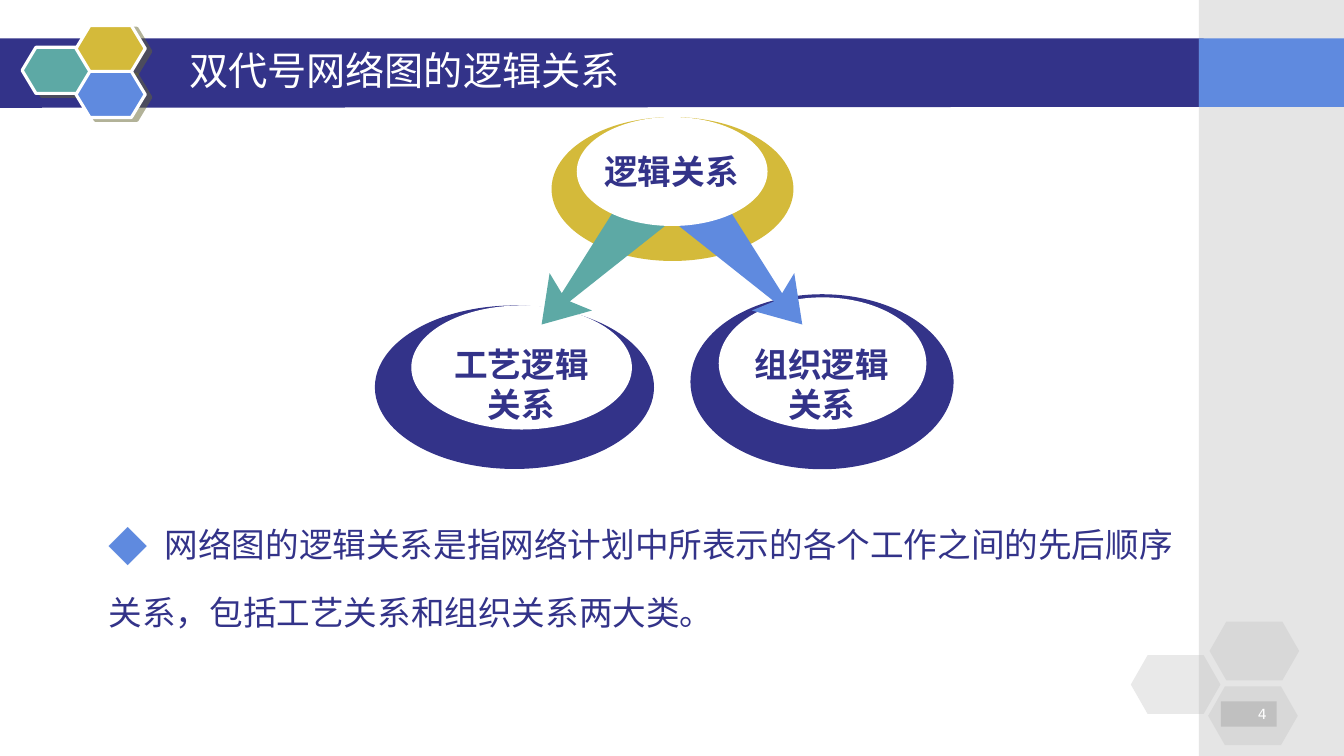
from dataclasses import dataclass

from lxml import etree
from pptx import Presentation
from pptx.dml.color import RGBColor
from pptx.enum.shapes import MSO_SHAPE
from pptx.enum.text import MSO_ANCHOR, PP_ALIGN
from pptx.oxml import parse_xml
from pptx.oxml.ns import qn
from pptx.shapes.autoshape import Shape
from pptx.slide import Slide
from pptx.util import Pt

RECTANGLE, HEXAGON, ELLIPSE = MSO_SHAPE.RECTANGLE, MSO_SHAPE.HEXAGON, MSO_SHAPE.OVAL
LEFT, CENTER, RIGHT = PP_ALIGN.LEFT, PP_ALIGN.CENTER, PP_ALIGN.RIGHT
TOP, MIDDLE = MSO_ANCHOR.TOP, MSO_ANCHOR.MIDDLE

COLORS = {
    "navy": "333389", "blue": "5F8ADF", "teal": "5DA9A5", "gold": "D4BA3A",
    "white": "FFFFFF", "gray": "C0C0C0", "shadow": "666633",
}
DRAWING = "http://schemas.openxmlformats.org/drawingml/2006/main"
CJK_FONT, NUMBER_FONT = "Noto Sans CJK SC", "DejaVu Sans"
WIDTH, HEIGHT = 960, 540

Box = tuple[float, float, float, float]
Points = list[tuple[float, float]]


@dataclass
class Figure:
    preset: MSO_SHAPE
    box: Box
    color: str
    opacity: int = 100
    adjustment: float | None = None
    badge: bool = False


@dataclass
class Text:
    content: str
    size: float
    color: str
    bold: bool = False
    align: PP_ALIGN = LEFT
    spacing: float | None = None
    font: str = CJK_FONT
    bullet: str = ""


@dataclass
class Node:
    outer: Box
    inner: Box
    color: str
    label: str
    label_center: float
    label_top: float


BACKDROP = [
    Figure(RECTANGLE, (856.3, 0, 103.7, HEIGHT), "gray", 40),
    Figure(RECTANGLE, (856.3, 27.4, 103.7, 49), "blue"),
    *(Figure(HEXAGON, (left, top, 49.4, 33), color, 100, 0.3, True)
      for left, top, color in [(15.8, 33.8, "teal"), (54.3, 18.2, "gold"), (54.3, 51, "blue")]),
    *(Figure(HEXAGON, (left, top, 64, 42), "gray", 35, 0.286)
      for left, top in [(807.8, 468), (864, 444), (863, 490.3)]),
]
TOP_NODE = Node((394, 83.6, 172.8, 102.8), (412, 83.6, 136.3, 77.8),
                "gold", "逻辑关系", 479.6, 104.5)
BRANCHES = [
    Node((267.8, 218.2, 199.4, 116.8), (293.8, 218.2, 157.6, 88.6),
         "navy", "工艺逻辑关系", 372.5, 242.4),
    Node((493.2, 210.2, 188, 125), (513.4, 212.4, 148.3, 94.3),
         "navy", "组织逻辑关系", 587, 242.4),
]
RIGHT_ARROW = [(506.9, 127.4), (558.7, 209.5), (567.4, 195.1), (573.1, 231.8),
               (537.1, 221.8), (553, 215.3), (476.6, 154.8)]
LEFT_ARROW = [(WIDTH - x, y) for x, y in RIGHT_ARROW]
BANNER = [(0, 27.4), (859.7, 27.4), (859, 76.3), (0, 77)]


def rgb(color: str) -> RGBColor:
    return RGBColor.from_string(COLORS[color])


def paint(shape: Shape, color: str) -> None:
    shape.shadow.inherit = False
    shape.fill.solid()
    shape.fill.fore_color.rgb = rgb(color)
    shape.line.fill.background()


def outline_badge(shape: Shape) -> None:
    """Give a badge hexagon its white edge and hard drop shadow."""
    shape.line.color.rgb = rgb("white")
    shape.line.width = Pt(2.25)
    effects = shape._element.spPr.find(qn("a:effectLst"))
    effects.append(parse_xml(
        f'<a:outerShdw xmlns:a="{DRAWING}" blurRad="0" dist="{Pt(4.5)}" dir="{27 * 60000}" '
        f'algn="ctr" rotWithShape="0"><a:srgbClr val="{COLORS["shadow"]}">'
        '<a:alpha val="50000"/></a:srgbClr></a:outerShdw>'))


def add_figure(slide: Slide, figure: Figure) -> Shape:
    shape = slide.shapes.add_shape(figure.preset, *map(Pt, figure.box))
    paint(shape, figure.color)
    if figure.adjustment is not None:
        shape.adjustments[0] = figure.adjustment
    if figure.opacity < 100:
        color = shape._element.spPr.find(qn("a:solidFill"))[0]
        etree.SubElement(color, qn("a:alpha")).set("val", str(figure.opacity * 1000))
    if figure.badge:
        outline_badge(shape)
    return shape


def add_polygon(slide: Slide, points: Points, color: str) -> None:
    start, *others = [(Pt(x), Pt(y)) for x, y in points]
    builder = slide.shapes.build_freeform(*start)
    builder.add_line_segments(others, close=True)
    paint(builder.convert_to_shape(), color)


def write(shape: Shape, texts: list[Text], anchor: MSO_ANCHOR = TOP) -> None:
    """Fill the shape with one paragraph per text."""
    frame = shape.text_frame
    frame.word_wrap = True
    frame.vertical_anchor = anchor
    for index, text in enumerate(texts):
        paragraph = frame.add_paragraph() if index else frame.paragraphs[0]
        paragraph.alignment = text.align
        if text.spacing:
            paragraph.line_spacing = Pt(text.spacing)
        if text.bullet:
            properties = paragraph._p.get_or_add_pPr()
            properties.set("marL", str(Pt(40)))
            properties.set("indent", str(-Pt(40)))
            color = etree.SubElement(properties, qn("a:buClr"))
            etree.SubElement(color, qn("a:srgbClr")).set("val", COLORS["blue"])
            etree.SubElement(properties, qn("a:buSzPct")).set("val", "117000")
            etree.SubElement(properties, qn("a:buFont")).set("typeface", CJK_FONT)
            etree.SubElement(properties, qn("a:buChar")).set("char", text.bullet)
        run = paragraph.add_run()
        run.text = text.content
        run.font.name = text.font
        run.font.size = Pt(text.size)
        run.font.bold = text.bold
        run.font.color.rgb = rgb(text.color)
        east_asian = etree.SubElement(run._r.get_or_add_rPr(), qn("a:ea"))
        east_asian.set("typeface", text.font)


def add_text(slide: Slide, box: Box, texts: list[Text], anchor: MSO_ANCHOR = TOP) -> None:
    write(slide.shapes.add_textbox(*map(Pt, box)), texts, anchor)


def add_node(slide: Slide, node: Node, arrows: dict[str, Points]) -> None:
    """Draw a ring with its label; arrows start beneath the white centre."""
    add_figure(slide, Figure(ELLIPSE, node.outer, node.color))
    for color, points in arrows.items():
        add_polygon(slide, points, color)
    add_figure(slide, Figure(ELLIPSE, node.inner, "white"))
    width = 115
    add_text(slide, (node.label_center - width / 2, node.label_top, width, 65),
             [Text(node.label, 24, "navy", True, CENTER, 28.6)])


def main() -> None:
    presentation = Presentation()
    presentation.slide_width, presentation.slide_height = Pt(WIDTH), Pt(HEIGHT)
    slide = presentation.slides.add_slide(presentation.slide_layouts[6])

    add_polygon(slide, BANNER, "navy")
    for figure in BACKDROP:
        add_figure(slide, figure)
    number_box = add_figure(slide, Figure(RECTANGLE, (872, 501, 40, 18), "gray"))
    write(number_box, [Text("4", 10, "white", align=RIGHT, font=NUMBER_FONT)], MIDDLE)

    for branch in BRANCHES:
        add_node(slide, branch, {})
    add_node(slide, TOP_NODE, {"blue": RIGHT_ARROW, "teal": LEFT_ARROW})

    add_text(slide, (70.6, 351, 868, 110), [
        Text("网络图的逻辑关系是指网络计划中所表示的各个工作之间的先后顺序",
             24, "navy", spacing=48.6, bullet="◆"),
        Text("关系，包括工艺关系和组织关系两大类。", 24, "navy", spacing=48.6),
    ])
    add_text(slide, (128, 29, 696, 42), [Text("双代号网络图的逻辑关系", 28, "white")], MIDDLE)
    presentation.save("out.pptx")


if __name__ == "__main__":
    main()
